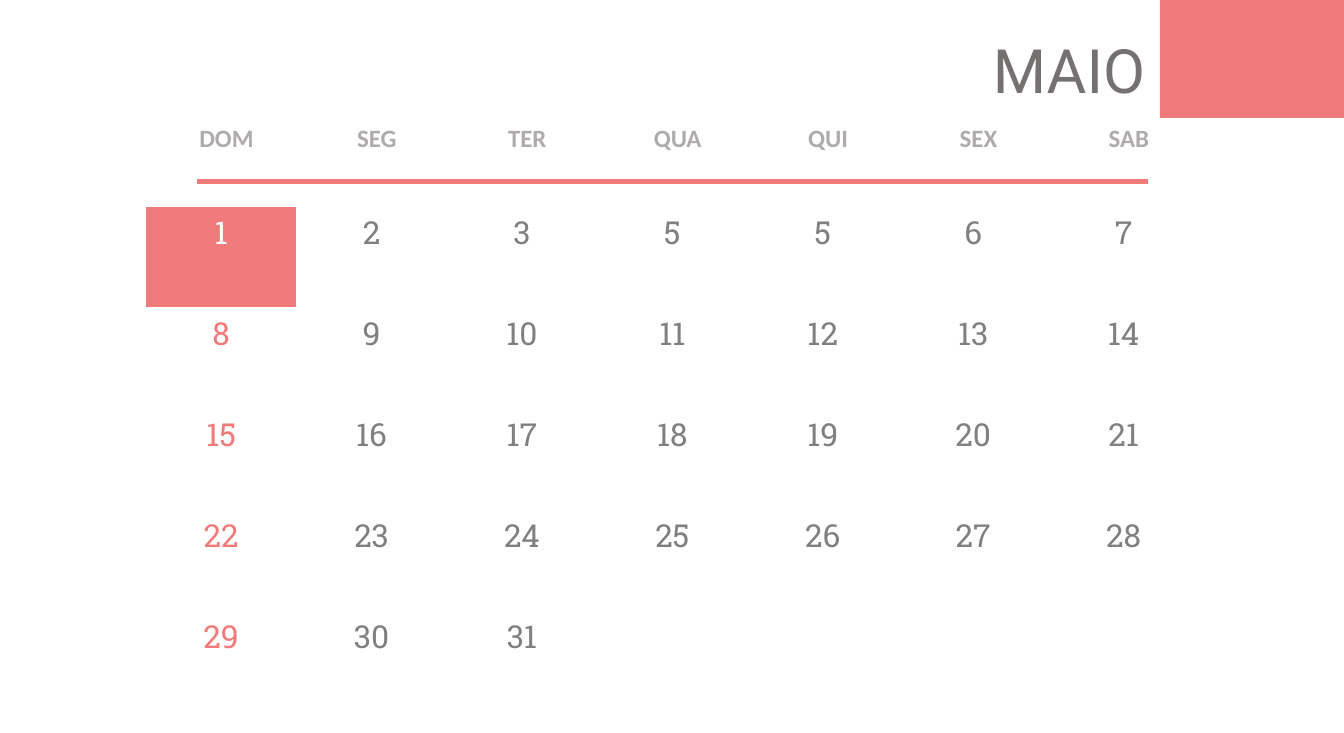
import dataclasses

import pptx
import pptx.dml.color
import pptx.enum.shapes
import pptx.enum.text
import pptx.oxml
import pptx.oxml.ns
import pptx.util
from pptx.util import Cm, Pt


@dataclasses.dataclass(frozen=True)
class Theme:
    coral: str = "F17B7B"
    white: str = "FFFFFF"
    day: str = "808080"
    weekday: str = "AFABAB"
    month: str = "767171"
    month_font: str = "Roboto"
    day_font: str = "Roboto Slab"
    weekday_font: str = "Calibri"
    month_size: int = 54
    day_size: int = 28
    weekday_size: int = 22


THEME = Theme()
WEEKDAYS = ["DOM", "SEG", "TER", "QUA", "QUI", "SEX", "SAB"]
WEEKS = [[1, 2, 3, 5, 5, 6, 7]] + [
    list(range(first, min(first + 7, 32))) for first in range(8, 32, 7)
]


def rgb(color):
    return pptx.dml.color.RGBColor.from_string(color)


def add_span(para, text, font, size, color, bold=False):
    span = para.add_run()
    span.text = text
    span.font.name = font
    span.font.size = Pt(size)
    span.font.bold = bold
    span.font.color.rgb = rgb(color)


def add_month(slide, name):
    box = slide.shapes.title
    box.left, box.top, box.width, box.height = Cm(30.71), Cm(0.89), Cm(5.36), Cm(2.57)
    frame = box.text_frame
    frame.word_wrap = False
    frame.auto_size = pptx.enum.text.MSO_AUTO_SIZE.SHAPE_TO_FIT_TEXT
    frame.vertical_anchor = pptx.enum.text.MSO_ANCHOR.TOP
    para = frame.paragraphs[0]
    para.alignment = pptx.enum.text.PP_ALIGN.LEFT
    para.line_spacing = 1.0
    add_span(para, name, THEME.month_font, THEME.month_size, THEME.month)


def set_borders(cell, color):
    properties = cell._tc.get_or_add_tcPr()
    for side in ("lnL", "lnR", "lnT", "lnB"):
        properties.append(pptx.oxml.parse_xml(
            f'<a:{side} {pptx.oxml.ns.nsdecls("a")} w="12700"><a:solidFill>'
            f'<a:srgbClr val="{color}"/></a:solidFill></a:{side}>'
        ))


def set_margins(cell, left, right, vertical):
    cell.margin_left, cell.margin_right = Cm(left), Cm(right)
    cell.margin_top = cell.margin_bottom = Cm(vertical)


def fill_weekday(cell, name):
    set_margins(cell, 0.33, 0, 0.18)
    para = cell.text_frame.paragraphs[0]
    para.alignment = pptx.enum.text.PP_ALIGN.CENTER
    add_span(para, name, THEME.weekday_font, THEME.weekday_size, THEME.weekday, bold=True)


def fill_day(cell, day, is_sunday):
    set_margins(cell, 0.36, 0.36, 0.15)
    is_holiday = day == 1
    color = THEME.coral if is_sunday else THEME.day
    if is_holiday:
        color = THEME.white
        cell.fill.solid()
        cell.fill.fore_color.rgb = rgb(THEME.coral)
    para = cell.text_frame.paragraphs[0]
    para.alignment = pptx.enum.text.PP_ALIGN.CENTER
    add_span(para, str(day), THEME.day_font, THEME.day_size, color)


def add_calendar(slide):
    column_width, header_height, week_height = Cm(4.69), Cm(2.77), Cm(3.15)
    table = slide.shapes.add_table(
        len(WEEKS) + 1, len(WEEKDAYS), Cm(4.55), Cm(3.68),
        column_width * len(WEEKDAYS), header_height + week_height * len(WEEKS),
    ).table
    table.first_row = table.horz_banding = False
    for column in table.columns:
        column.width = column_width
    for index, row in enumerate(table.rows):
        row.height = week_height if index else header_height
    for cell in table.iter_cells():
        set_borders(cell, THEME.white)
        cell.fill.background()
    for column, name in enumerate(WEEKDAYS):
        fill_weekday(table.cell(0, column), name)
    for row, week in enumerate(WEEKS, start=1):
        for column, day in enumerate(week):
            fill_day(table.cell(row, column), day, is_sunday=column == 0)


def add_rule(slide, left, right, top):
    rule = slide.shapes.add_connector(
        pptx.enum.shapes.MSO_CONNECTOR.STRAIGHT, left, top, right, top)
    rule.line.color.rgb = rgb(THEME.coral)
    rule.line.width = Pt(4.5)
    rule._element.spPr.append(
        pptx.oxml.parse_xml(f'<a:effectLst {pptx.oxml.ns.nsdecls("a")}/>'))


def add_block(slide, left, top, width, height):
    block = slide.shapes.add_shape(
        pptx.enum.shapes.MSO_SHAPE.RECTANGLE, left, top, width, height)
    block.shadow.inherit = False
    block.fill.solid()
    block.fill.fore_color.rgb = rgb(THEME.coral)
    block.line.fill.background()


def main():
    deck = pptx.Presentation()
    deck.slide_width, deck.slide_height = Cm(41.91), Cm(22.86)
    slide = deck.slides.add_slide(deck.slide_layouts.get_by_name("Title Only"))
    add_calendar(slide)
    add_month(slide, "MAIO")
    add_rule(slide, Cm(6.15), Cm(35.79), Cm(5.66))
    add_block(slide, Cm(36.17), Cm(0), Cm(5.74), Cm(3.68))
    deck.save("out.pptx")


if __name__ == "__main__":
    main()
